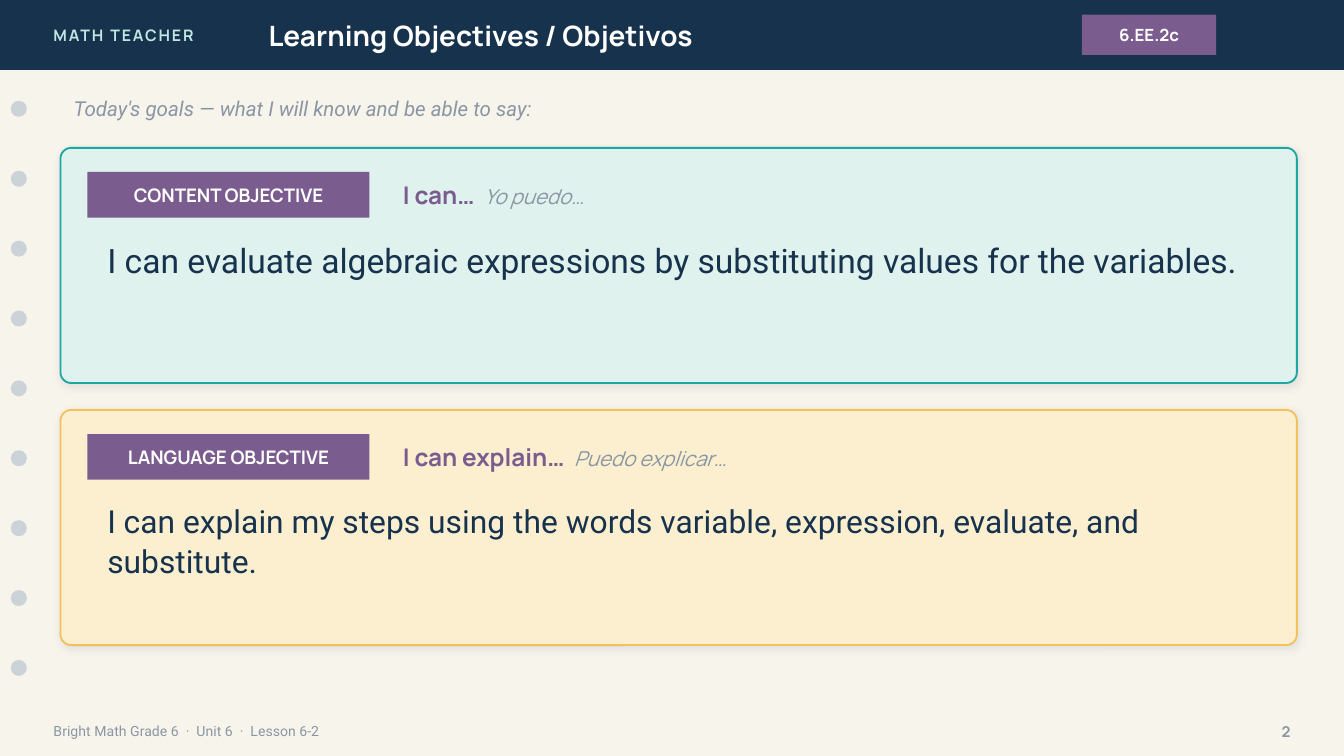
from lxml.etree import SubElement
from pptx import Presentation
from pptx.dml.color import RGBColor
from pptx.enum.shapes import MSO_SHAPE
from pptx.enum.text import MSO_ANCHOR, PP_ALIGN
from pptx.oxml.ns import qn
from pptx.util import Inches, Pt

NAVY, PURPLE, GRAY, WHITE = "17324D", "7A5C8E", "8A96A3", "FFFFFF"
HEADING, BODY = "Manrope", "Roboto"


def rgb(code):
    return RGBColor.from_string(code)


class ObjectivesSlide:
    """Holds the slide and the style of its elements."""

    def __init__(self, presentation, background):
        self.slide = presentation.slides.add_slide(presentation.slide_layouts[6])
        self.slide.background.fill.solid()
        self.slide.background.fill.fore_color.rgb = rgb(background)

    def set_font(self, font, size, color, name, bold=False, italic=False):
        font.size, font.name = Pt(size), name
        font.bold, font.italic = bold, italic
        font.color.rgb = rgb(color)

    def block(self, kind, left, top, width, height, fill):
        block = self.slide.shapes.add_shape(
            kind, Inches(left), Inches(top), Inches(width), Inches(height))
        block.shadow.inherit = False
        block.fill.solid()
        block.fill.fore_color.rgb = rgb(fill)
        block.line.fill.background()
        return block

    def text(self, left, top, width, height, words, size, color, name=BODY,
             bold=False, italic=False, align=PP_ALIGN.LEFT, anchor=MSO_ANCHOR.MIDDLE):
        """Add a text box with one paragraph and return the paragraph."""
        frame = self.slide.shapes.add_textbox(
            Inches(left), Inches(top), Inches(width), Inches(height)).text_frame
        frame.word_wrap = True
        frame.vertical_anchor = anchor
        paragraph = frame.paragraphs[0]
        paragraph.alignment = align
        paragraph.add_run().text = words
        self.set_font(paragraph.font, size, color, name, bold, italic)
        return paragraph

    def tag(self, left, top, width, height, words, size):
        tag = self.block(MSO_SHAPE.RECTANGLE, left, top, width, height, PURPLE)
        tag.text_frame.vertical_anchor = MSO_ANCHOR.MIDDLE
        label = tag.text_frame.paragraphs[0]
        label.text = words
        label.alignment = PP_ALIGN.CENTER
        self.set_font(label.font, size, WHITE, HEADING, bold=True)

    def card(self, top, fill, border):
        card = self.block(MSO_SHAPE.ROUNDED_RECTANGLE, 0.45, top, 9.2, 1.75, fill)
        card.adjustments[0] = 0.08 / 1.75
        card.line.color.rgb = rgb(border)
        card.line.width = Pt(1)
        effects = card._element.spPr.find(qn("a:effectLst"))
        shadow = SubElement(effects, qn("a:outerShdw"), blurRad=str(Pt(4)),
                            dist=str(Pt(1)), dir="5400000", rotWithShape="0")
        tint = SubElement(shadow, qn("a:srgbClr"), val="1C2E42")
        SubElement(tint, qn("a:alpha"), val="10000")

    def objective(self, top, fill, border, label, starter, translation, goal, goal_size):
        self.card(top, fill, border)
        self.tag(0.65, top + 0.18, 2.1, 0.34, label, 10)
        prompt = self.text(2.9, top + 0.18, 6.6, 0.34, starter + "  ", 13, PURPLE,
                           HEADING, bold=True)
        spanish = prompt.add_run()
        spanish.text = translation
        self.set_font(spanish.font, 11, GRAY, HEADING, italic=True)
        statement = self.text(0.7, top + 0.62, 8.7, 1, goal, goal_size, NAVY,
                              anchor=MSO_ANCHOR.TOP)
        statement.line_spacing = 1.05


def main():
    presentation = Presentation()
    presentation.slide_width = Inches(10)
    presentation.slide_height = Inches(10 * 9 / 16)
    page = ObjectivesSlide(presentation, "F7F4EC")

    page.block(MSO_SHAPE.RECTANGLE, 0, 0, 10, 0.52, NAVY)
    author = page.text(0.3, 0, 2.4, 0.52, "MATH TEACHER", 8.5, "BFE6E2", HEADING, bold=True)
    author.runs[0].font._element.set("spc", "100")
    page.text(1.9, 0, 5.6, 0.52, "Learning Objectives / Objetivos", 15, WHITE,
              HEADING, bold=True)
    page.tag(8.05, 0.11, 1, 0.3, "6.EE.2c", 9)

    for hole in range(9):
        page.block(MSO_SHAPE.OVAL, 0.08, 0.75 + 0.52 * hole, 0.12, 0.12, "CBD3D9")

    page.text(0.3, 5.3, 7, 0.28, "Bright Math Grade 6  ·  Unit 6  ·  Lesson 6-2", 7.5, GRAY)
    page.text(9.2, 5.3, 0.5, 0.28, "2", 8, GRAY, HEADING, bold=True, align=PP_ALIGN.RIGHT)
    page.text(0.45, 0.66, 9.2, 0.3, "Today's goals — what I will know and be able to say:",
              11, GRAY, italic=True)

    page.objective(
        1.1, "DFF2EE", "1FA6A2", "CONTENT OBJECTIVE", "I can…", "Yo puedo…",
        "I can evaluate algebraic expressions by substituting values for the variables.", 18)
    page.objective(
        3.05, "FBEFD0", "F2C15B", "LANGUAGE OBJECTIVE", "I can explain…", "Puedo explicar…",
        "I can explain my steps using the words variable, expression, evaluate, "
        "and substitute.", 17)

    presentation.save("out.pptx")


if __name__ == "__main__":
    main()
